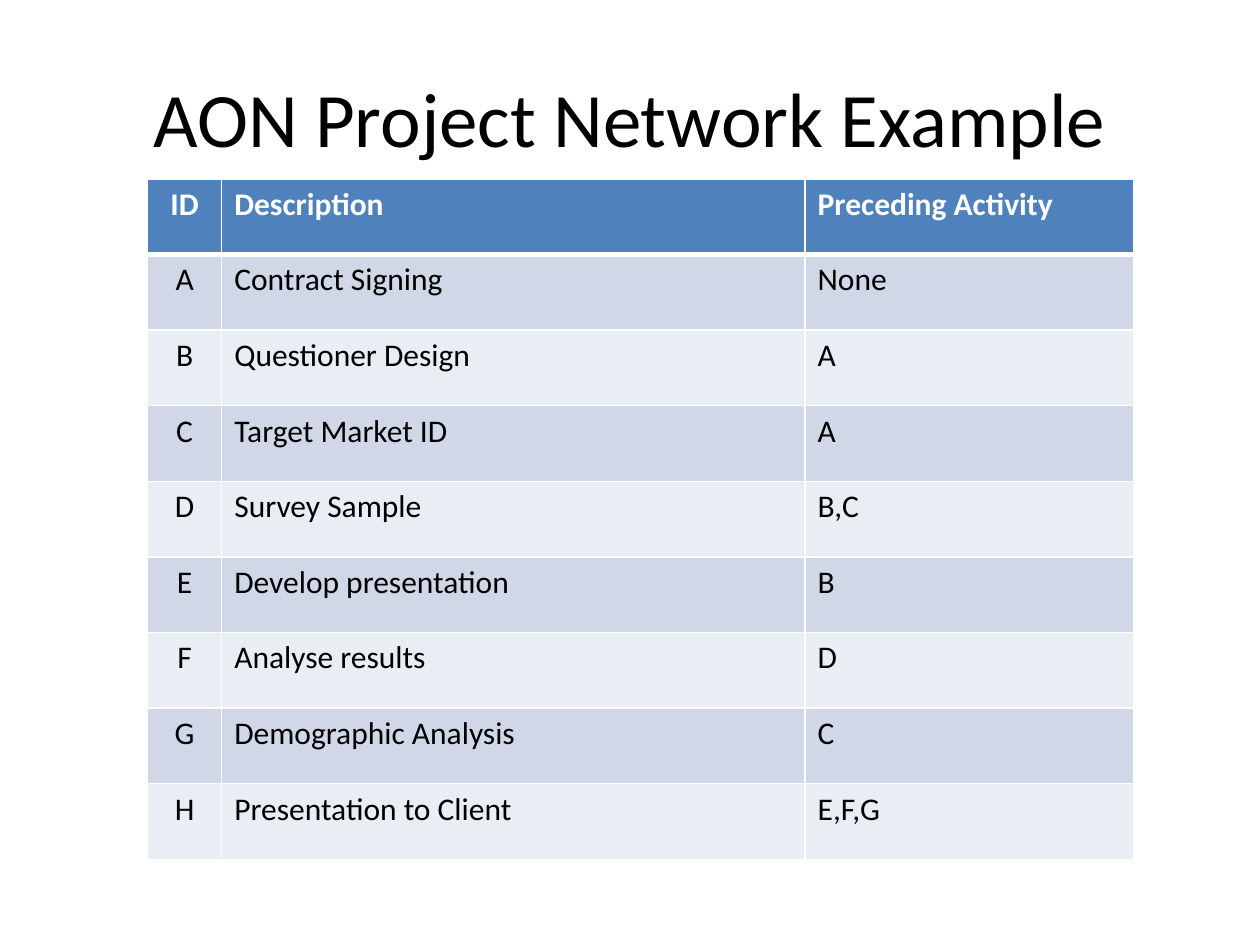
"""Build the project network example slide with its activity table."""
from lxml.etree import SubElement
from pptx import Presentation
from pptx.dml.color import RGBColor
from pptx.enum.text import MSO_ANCHOR, PP_ALIGN
from pptx.oxml.ns import qn
from pptx.util import Inches, Pt


def paint(fill, color):
    fill.solid()
    fill.fore_color.rgb = RGBColor.from_string(color)


def write(frame, text, size, color, bold, align):
    para = frame.paragraphs[0]
    para.alignment = align
    run = para.add_run()
    run.text = text
    run.font.name = "Calibri"
    run.font.size = Pt(size)
    run.font.bold = bold
    paint(run.font.fill, color)


ROWS = [
    ("ID", "Description", "Preceding Activity"),
    ("A", "Contract Signing", "None"),
    ("B", "Questioner Design", "A"),
    ("C", "Target Market ID", "A"),
    ("D", "Survey Sample", "B,C"),
    ("E", "Develop presentation", "B"),
    ("F", "Analyse results", "D"),
    ("G", "Demographic Analysis", "C"),
    ("H", "Presentation to Client", "E,F,G"),
]
WIDTHS = [0.59, 4.63, 2.61]
HEIGHT = 0.6
BANDS = ["E9EDF4", "D0D8E8"]

deck = Presentation()
deck.slide_width, deck.slide_height = Inches(10), Inches(7.5)
slide = deck.slides.add_slide(deck.slide_layouts[6])
paint(slide.background.fill, "FFFFFF")

title = slide.shapes.add_textbox(Inches(0.5), Inches(0.3), Inches(9), Inches(1.25))
frame = title.text_frame
frame.word_wrap = True
frame.vertical_anchor = MSO_ANCHOR.MIDDLE
write(frame, "AON Project Network Example", 44, "000000", False, PP_ALIGN.CENTER)

table = slide.shapes.add_table(
    len(ROWS), len(WIDTHS), Inches(1.17), Inches(1.42),
    Inches(sum(WIDTHS)), Inches(HEIGHT * len(ROWS)),
).table
for col, width in zip(table.columns, WIDTHS):
    col.width = Inches(width)

for r, texts in enumerate(ROWS):
    table.rows[r].height = Inches(HEIGHT)
    head = r == 0
    for c, text in enumerate(texts):
        cell = table.cell(r, c)
        props = cell._tc.get_or_add_tcPr()
        for side in "LRTB":
            thick = (r, side) in [(0, "B"), (1, "T")]
            line = SubElement(props, qn("a:ln" + side), w=str(Pt(3 if thick else 1)))
            solid = SubElement(line, qn("a:solidFill"))
            SubElement(solid, qn("a:srgbClr"), val="FFFFFF")
        paint(cell.fill, "4F81BD" if head else BANDS[r % 2])
        align = PP_ALIGN.CENTER if c == 0 else PP_ALIGN.LEFT
        write(cell.text_frame, text, 18, "FFFFFF" if head else "000000", head, align)

deck.save("out.pptx")
